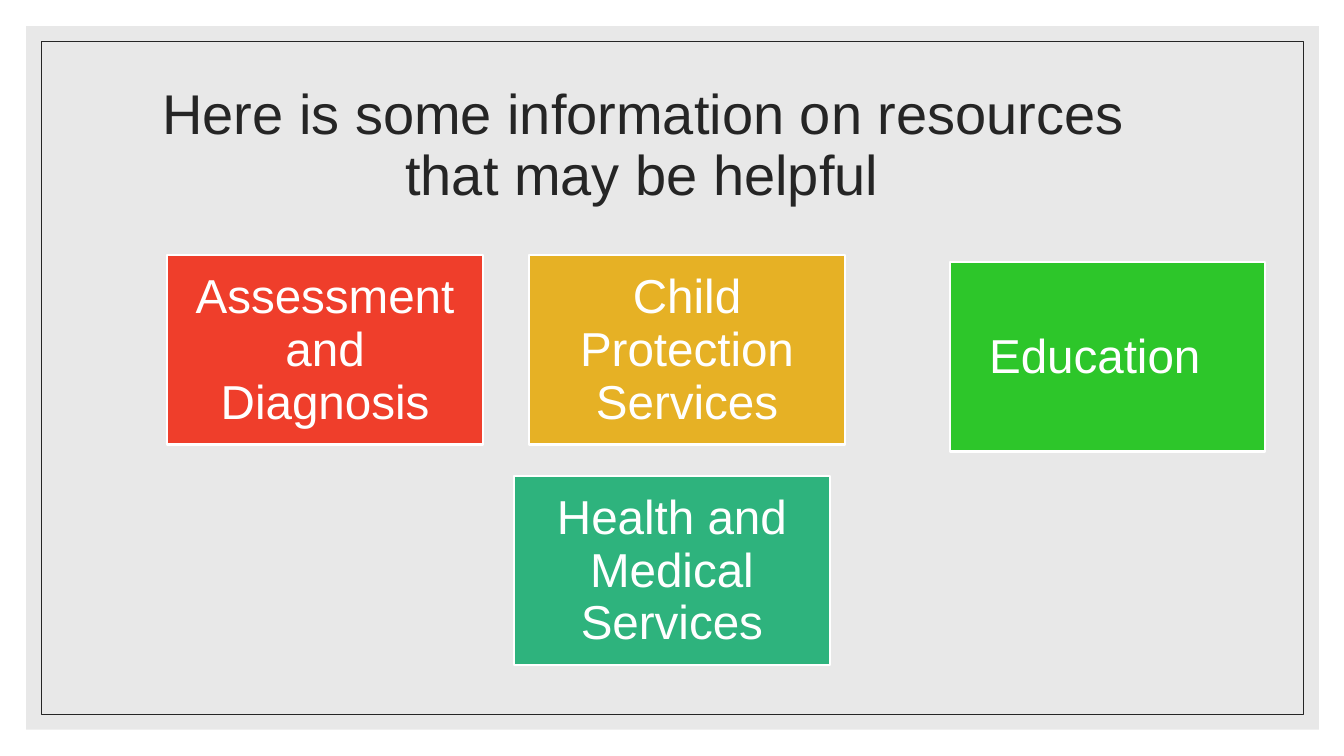
"""Builds the slide that introduces four kinds of helpful resources."""
from dataclasses import dataclass

import pptx
import pptx.dml.color
import pptx.enum.shapes
import pptx.enum.text
import pptx.oxml
import pptx.oxml.ns
import pptx.util

Inches = pptx.util.Inches
Pt = pptx.util.Pt
Align = pptx.enum.text.PP_ALIGN
Anchor = pptx.enum.text.MSO_ANCHOR


@dataclass(frozen=True)
class Theme:
    font: str = "Arial"
    ink: str = "252525"
    white: str = "FFFFFF"
    panel: str = "D9D9D9"
    red: str = "EF3E2B"
    amber: str = "E6B125"
    green: str = "2DC62A"
    teal: str = "2EB37D"
    title_size: float = 40
    card_size: float = 34
    frame_width: float = 0.48
    card_border: float = 1.56


THEME = Theme()
CARD_WIDTH, CARD_HEIGHT = 3.13, 1.88


def rgb(code):
    return pptx.dml.color.RGBColor.from_string(code)


def add_box(slide, left, top, width, height, fill=None, line=None, line_width=0):
    box = slide.shapes.add_shape(
        pptx.enum.shapes.MSO_SHAPE.RECTANGLE,
        Inches(left), Inches(top), Inches(width), Inches(height))
    box.shadow.inherit = False
    if fill:
        box.fill.solid()
        box.fill.fore_color.rgb = rgb(fill)
    else:
        box.fill.background()
    if line:
        box.line.color.rgb = rgb(line)
        box.line.width = Pt(line_width)
    else:
        box.line.fill.background()
    return box


def set_opacity(box, percent):
    color = box.fill._xPr.find(".//" + pptx.oxml.ns.qn("a:srgbClr"))
    alpha = pptx.oxml.parse_xml(
        f'<a:alpha {pptx.oxml.ns.nsdecls("a")} val="{percent * 1000}"/>')
    color.append(alpha)


def write(shape, text, size, color, align, anchor, insets, spacing):
    frame = shape.text_frame
    frame.word_wrap = True
    frame.vertical_anchor = anchor
    (frame.margin_left, frame.margin_top,
     frame.margin_right, frame.margin_bottom) = map(Inches, insets)
    paragraph = frame.paragraphs[0]
    paragraph.text = text
    paragraph.alignment = align
    paragraph.line_spacing = Pt(spacing)
    paragraph.font.name = THEME.font
    paragraph.font.size = Pt(size)
    paragraph.font.color.rgb = rgb(color)
    return paragraph


def add_background(slide):
    panel = add_box(slide, 0.26, 0.26, 12.82, 6.98, fill=THEME.panel)
    set_opacity(panel, 60)
    add_box(slide, 0.41, 0.41, 12.52, 6.68,
            line=THEME.ink, line_width=THEME.frame_width)


def add_title(slide, text):
    title = slide.shapes.add_textbox(
        Inches(1.59), Inches(0.76), Inches(10.16), Inches(1.29))
    paragraph = write(title, text, THEME.title_size, THEME.ink, Align.LEFT,
                      Anchor.TOP, (0, 0.09, 0, 0), 43.2)
    properties = paragraph._p.get_or_add_pPr()
    properties.set("marL", str(Inches(2.43)))
    properties.set("indent", str(Inches(-2.41)))


def add_card(slide, text, left, top, fill, align=Align.CENTER, inset=0.27):
    card = add_box(slide, left, top, CARD_WIDTH, CARD_HEIGHT,
                   fill, THEME.white, THEME.card_border)
    write(card, text, THEME.card_size, THEME.white, align,
          Anchor.MIDDLE, (inset, 0, inset, 0), 37.6)


def main():
    deck = pptx.Presentation()
    deck.slide_width, deck.slide_height = Inches(13.33), Inches(7.5)
    slide = deck.slides.add_slide(deck.slide_layouts[6])
    add_background(slide)
    add_title(slide, "Here is some information on resources that may be helpful")
    add_card(slide, "Assessment and Diagnosis", 1.66, 2.53, THEME.red)
    add_card(slide, "Child Protection Services", 5.25, 2.53, THEME.amber)
    add_card(slide, "Education", 9.42, 2.6, THEME.green, Align.LEFT, 0.39)
    add_card(slide, "Health and Medical Services", 5.1, 4.72, THEME.teal)
    deck.save("out.pptx")


if __name__ == "__main__":
    main()
